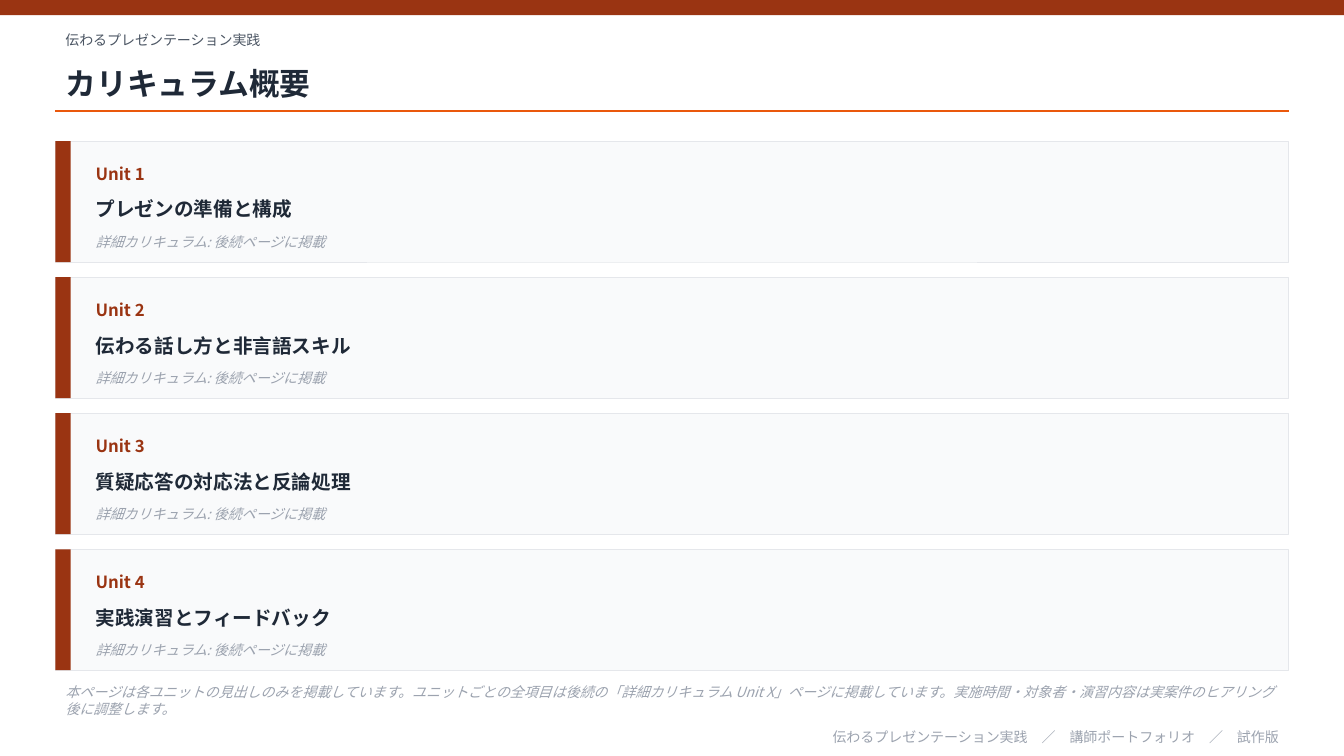
import pptx
import pptx.dml.color
import pptx.enum.shapes
import pptx.enum.text
import pptx.oxml.ns
import pptx.util
import lxml.etree

Inches = pptx.util.Inches
ALIGN = pptx.enum.text.PP_ALIGN

FONT = "Noto Sans CJK JP"
RUST = "9A3412"
ORANGE = "EA580C"
INK = "1F2937"
SLATE = "4B5563"
MUTED = "9CA3AF"
CARD_FILL = "F9FAFB"
CARD_EDGE = "E5E7EB"

LEFT, WIDTH = 0.55, 12.23
CARD_TOP, CARD_HEIGHT, CARD_PITCH = 1.4, 1.2, 1.35
CARD_TEXT_LEFT, CARD_TEXT_WIDTH = 0.85, 11.73

COURSE = "伝わるプレゼンテーション実践"
UNITS = [
    "プレゼンの準備と構成",
    "伝わる話し方と非言語スキル",
    "質疑応答の対応法と反論処理",
    "実践演習とフィードバック",
]
UNIT_DETAIL = "詳細カリキュラム: 後続ページに掲載"
NOTICE = (
    "本ページは各ユニットの見出しのみを掲載しています。"
    "ユニットごとの全項目は後続の「詳細カリキュラム Unit X」ページに掲載しています。"
    "実施時間・対象者・演習内容は実案件のヒアリング後に調整します。"
)
FOOTER = f"{COURSE}　／　講師ポートフォリオ　／　試作版"


def color(hex_value):
    return pptx.dml.color.RGBColor.from_string(hex_value)


def write_text(frame, text, size=10, ink=MUTED, bold=False, italic=False, align=ALIGN.LEFT):
    frame.word_wrap = True
    frame.auto_size = pptx.enum.text.MSO_AUTO_SIZE.NONE
    frame.vertical_anchor = pptx.enum.text.MSO_ANCHOR.MIDDLE
    paragraph = frame.paragraphs[0]
    paragraph.alignment = align
    run = paragraph.add_run()
    run.text = text
    run.font.size = pptx.util.Pt(size)
    run.font.bold = bold
    run.font.italic = italic
    run.font.color.rgb = color(ink)
    run.font.name = FONT
    east_asian = lxml.etree.SubElement(run.font._element, pptx.oxml.ns.qn("a:ea"))
    east_asian.set("typeface", FONT)


def add_label(slide, text, left, top, width, height, **style):
    label = slide.shapes.add_textbox(Inches(left), Inches(top), Inches(width), Inches(height))
    write_text(label.text_frame, text, **style)


def set_title(slide, text, left, top, width, height, **style):
    title = slide.shapes.title
    title.left, title.top = Inches(left), Inches(top)
    title.width, title.height = Inches(width), Inches(height)
    write_text(title.text_frame, text, **style)


def add_block(slide, left, top, width, height, fill, edge=None):
    block = slide.shapes.add_shape(
        pptx.enum.shapes.MSO_SHAPE.RECTANGLE,
        Inches(left), Inches(top), Inches(width), Inches(height),
    )
    block.shadow.inherit = False
    block.fill.solid()
    block.fill.fore_color.rgb = color(fill)
    if edge:
        block.line.color.rgb = color(edge)
        block.line.width = pptx.util.Pt(0.5)
    else:
        block.line.fill.background()


def add_rule(slide, left, top, width, ink):
    rule = slide.shapes.add_connector(
        pptx.enum.shapes.MSO_CONNECTOR.STRAIGHT,
        Inches(left), Inches(top), Inches(left + width), Inches(top),
    )
    rule.line.color.rgb = color(ink)
    rule.line.width = pptx.util.Pt(1)
    lxml.etree.SubElement(rule._element.spPr, pptx.oxml.ns.qn("a:effectLst"))


def add_unit_card(slide, number, heading, top):
    add_block(slide, LEFT, top, WIDTH, CARD_HEIGHT, CARD_FILL, CARD_EDGE)
    add_block(slide, LEFT, top, 0.15, CARD_HEIGHT, RUST)
    add_label(slide, f"Unit {number}", CARD_TEXT_LEFT, top + 0.12, 1.5, 0.4,
              size=12, ink=RUST, bold=True)
    add_label(slide, heading, CARD_TEXT_LEFT, top + 0.45, CARD_TEXT_WIDTH, 0.45,
              size=14, ink=INK, bold=True)
    add_label(slide, UNIT_DETAIL, CARD_TEXT_LEFT, top + 0.85, CARD_TEXT_WIDTH, 0.3,
              italic=True)


def main():
    deck = pptx.Presentation()
    deck.slide_width, deck.slide_height = Inches(13.33), Inches(7.5)
    slide = deck.slides.add_slide(deck.slide_layouts.get_by_name("Title Only"))

    add_block(slide, 0, 0, 13.33, 0.15, RUST)
    add_label(slide, COURSE, LEFT, 0.25, WIDTH, 0.3, ink=SLATE)
    set_title(slide, "カリキュラム概要", LEFT, 0.55, WIDTH, 0.55, size=22, ink=INK, bold=True)
    add_rule(slide, LEFT, 1.1, WIDTH, ORANGE)

    for index, heading in enumerate(UNITS):
        add_unit_card(slide, index + 1, heading, CARD_TOP + index * CARD_PITCH)

    add_label(slide, NOTICE, LEFT, 6.75, WIDTH, 0.4, italic=True)
    add_label(slide, FOOTER, LEFT, 7.2, WIDTH, 0.22, align=ALIGN.RIGHT)

    deck.save("out.pptx")


if __name__ == "__main__":
    main()
